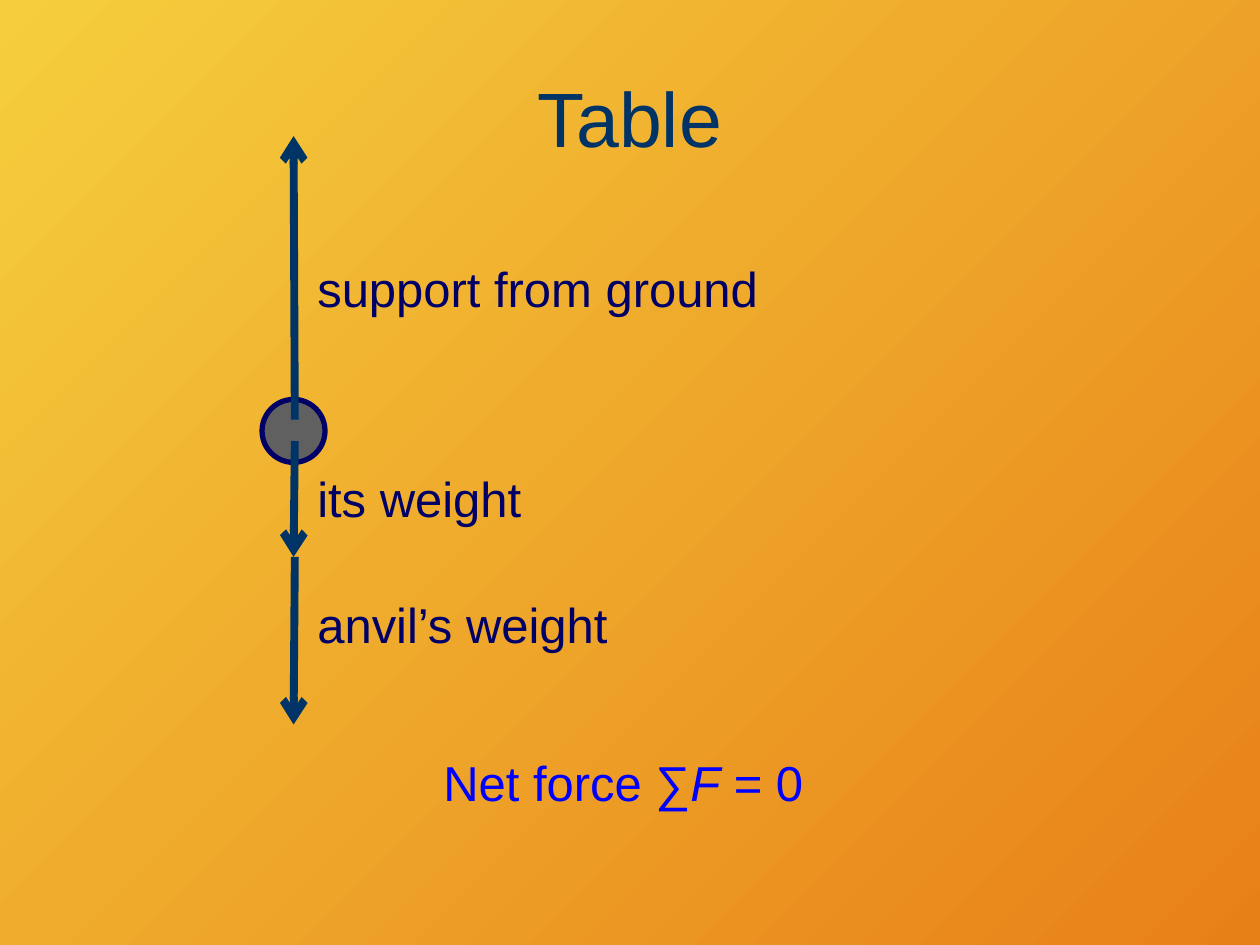
import lxml.etree
import pptx
import pptx.dml.color
import pptx.enum.shapes
import pptx.enum.text
import pptx.oxml.ns
import pptx.util
from pptx.util import Inches


def rgb(value):
    """Turn a hex string into a colour."""
    return pptx.dml.color.RGBColor.from_string(value)


def apply(target, formats):
    """Set each attribute of the target from a dict of values."""
    for name, value in formats.items():
        setattr(target, name, value)


class ForceSlide:
    """Hold the style and the slide of a force diagram."""

    FONT = "Arial"
    INK, LABEL, NET, BALL = "003366", "000066", "0000FF", "606060"
    GRADIENT = ("F5CE3D", "E88018")

    def __init__(self, deck):
        """Add a slide with a title placeholder."""
        self.slide = deck.slides.add_slide(deck.slide_layouts[5])

    def background(self):
        """Fill the background with a diagonal gradient."""
        fill = self.slide.background.fill
        fill.gradient()
        fill.gradient_angle = 315
        for stop, color, position in zip(fill.gradient_stops, self.GRADIENT, (0, 1)):
            stop.color.rgb = rgb(color)
            stop.position = position

    def add_words(self, paragraph, text, size, color, italic=False):
        """Add a run in the slide's font."""
        run = paragraph.add_run()
        run.text = text
        apply(run.font, {"name": self.FONT, "size": pptx.util.Pt(size), "italic": italic})
        run.font.color.rgb = rgb(color)

    def title(self, text):
        """Place and fill the title."""
        heading = self.slide.shapes.title
        apply(heading, {"left": Inches(0.5), "top": Inches(0.3),
                        "width": Inches(9), "height": Inches(1.25)})
        heading.text_frame.vertical_anchor = pptx.enum.text.MSO_ANCHOR.MIDDLE
        paragraph = heading.text_frame.paragraphs[0]
        paragraph.alignment = pptx.enum.text.PP_ALIGN.CENTER
        self.add_words(paragraph, text, 44, self.INK)

    def ball(self, left, top, diameter):
        """Draw the body that the forces act on."""
        body = self.slide.shapes.add_shape(
            pptx.enum.shapes.MSO_SHAPE.OVAL,
            Inches(left), Inches(top), Inches(diameter), Inches(diameter))
        body.shadow.inherit = False
        body.fill.solid()
        body.fill.fore_color.rgb = rgb(self.BALL)
        body.line.color.rgb = rgb(self.LABEL)
        body.line.width = pptx.util.Pt(3)

    def label(self, shapes, left, top, width, pieces, color):
        """Add a one-line label made of (text, italic) pieces."""
        caption = shapes.add_textbox(Inches(left), Inches(top), Inches(width), Inches(0.57))
        apply(caption.text_frame, {"word_wrap": False,
                                   "auto_size": pptx.enum.text.MSO_AUTO_SIZE.SHAPE_TO_FIT_TEXT})
        for text, italic in pieces:
            self.add_words(caption.text_frame.paragraphs[0], text, 28, color, italic)

    def arrow(self, shapes, start, end):
        """Draw a vertical force arrow."""
        force = shapes.add_connector(
            pptx.enum.shapes.MSO_CONNECTOR.STRAIGHT,
            Inches(2.34), Inches(start), Inches(2.33), Inches(end))
        force.line.color.rgb = rgb(self.INK)
        force.line.width = pptx.util.Pt(4.5)
        properties = force._element.spPr
        outline = properties.find(pptx.oxml.ns.qn("a:ln"))
        lxml.etree.SubElement(outline, pptx.oxml.ns.qn("a:tailEnd"), type="arrow")
        lxml.etree.SubElement(properties, pptx.oxml.ns.qn("a:effectLst"))

    def force(self, name, start, end, label_top, label_width):
        """Group a force arrow with its label."""
        shapes = self.slide.shapes.add_group_shape().shapes
        self.arrow(shapes, start, end)
        self.label(shapes, 2.42, label_top, label_width, [(name, False)], self.LABEL)


def main():
    """Build the force diagram and save it."""
    deck = pptx.Presentation()
    apply(deck, {"slide_width": Inches(10), "slide_height": Inches(7.5)})
    diagram = ForceSlide(deck)
    diagram.background()
    diagram.title("Table")
    diagram.ball(2.08, 3.17, 0.5)
    diagram.force("its weight", 3.5, 4.42, 3.67, 1.86)
    diagram.force("support from ground", 3.33, 1.08, 2, 3.81)
    diagram.label(diagram.slide.shapes, 3.42, 5.92, 3.09,
                  [("Net force ∑", False), ("F", True), (" = 0", False)], diagram.NET)
    diagram.force("anvil’s weight", 4.42, 5.75, 4.67, 2.58)
    deck.save("out.pptx")


if __name__ == "__main__":
    main()
